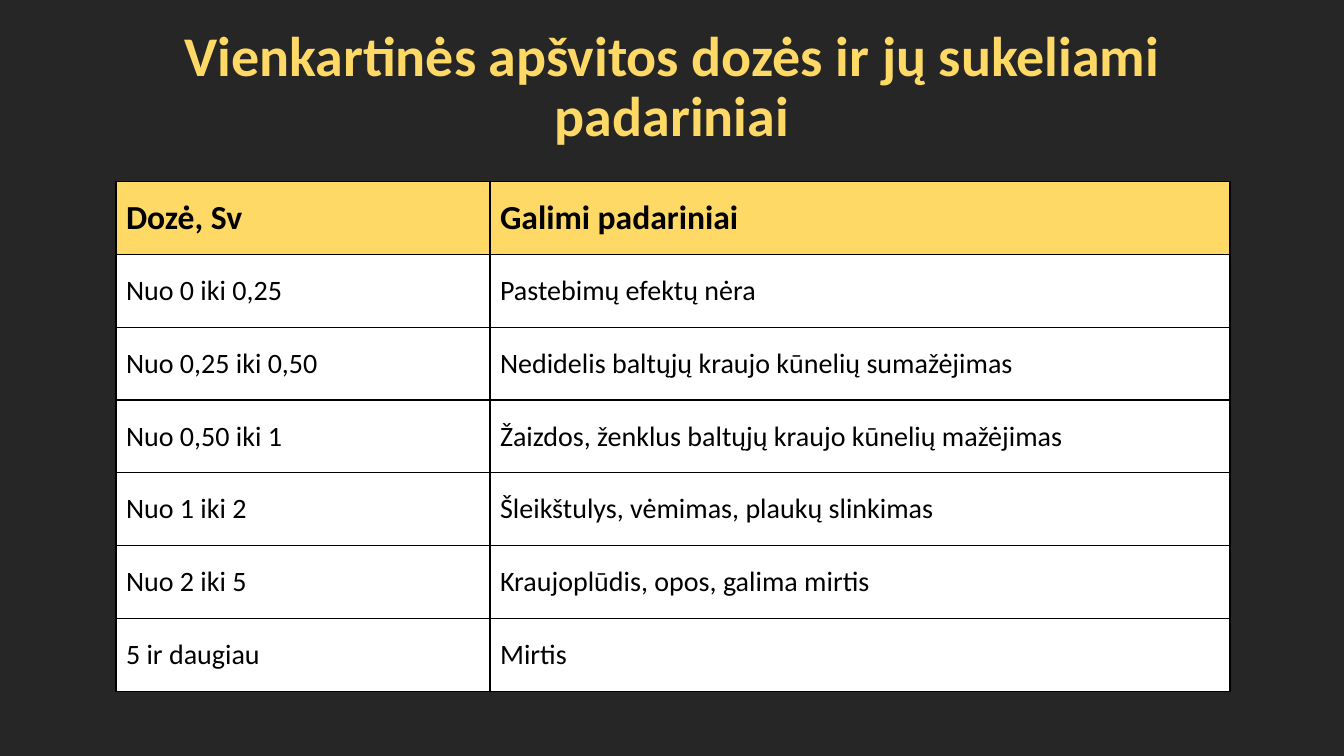
from lxml.etree import SubElement
from pptx import Presentation
from pptx.dml.color import RGBColor
from pptx.enum.text import MSO_ANCHOR as Anchor, PP_ALIGN as Align
from pptx.oxml.ns import qn
from pptx.util import Inches, Pt

TITLE = "Vienkartinės apšvitos dozės ir jų sukeliami padariniai"
DOSES = [
    ("Dozė, Sv", "Galimi padariniai"),
    ("Nuo 0 iki 0,25", "Pastebimų efektų nėra"),
    ("Nuo 0,25 iki 0,50", "Nedidelis baltųjų kraujo kūnelių sumažėjimas"),
    ("Nuo 0,50 iki 1", "Žaizdos, ženklus baltųjų kraujo kūnelių mažėjimas"),
    ("Nuo 1 iki 2", "Šleikštulys, vėmimas, plaukų slinkimas"),
    ("Nuo 2 iki 5", "Kraujoplūdis, opos, galima mirtis"),
    ("5 ir daugiau", "Mirtis"),
]
DARK, GOLD, WHITE, BLACK = "262626", "FFD966", "FFFFFF", "000000"
WIDTH, HEIGHT = 13.33, 7.5
COLUMNS = (3.71, 7.34)
TABLE_TOP, TABLE_HEIGHT = 1.8, 5.06


def paint(fill, color):
    fill.solid()
    fill.fore_color.rgb = RGBColor.from_string(color)


def style(paragraph, size, color, bold):
    font = paragraph.font
    font.name, font.size, font.bold = "Calibri", Pt(size), bold
    paint(font.fill, color)


def outline(cell):
    properties = cell._tc.get_or_add_tcPr()
    for position, side in enumerate(("lnL", "lnR", "lnT", "lnB")):
        border = properties.makeelement(qn(f"a:{side}"), {"w": str(Pt(1))})
        fill = SubElement(border, qn("a:solidFill"))
        SubElement(fill, qn("a:srgbClr"), val=BLACK)
        properties.insert(position, border)


def add_title(slide):
    title_width = 11.5
    box = slide.shapes.add_textbox(
        Inches((WIDTH - title_width) / 2), Inches(0.15), Inches(title_width), Inches(1.45))
    frame = box.text_frame
    frame.word_wrap = True
    frame.vertical_anchor = Anchor.MIDDLE
    heading = frame.paragraphs[0]
    heading.text = TITLE
    heading.alignment = Align.CENTER
    heading.line_spacing = 0.9
    style(heading, 40, GOLD, True)


def add_doses(slide):
    table_width = sum(COLUMNS)
    table = slide.shapes.add_table(
        len(DOSES), len(COLUMNS), Inches(1.15), Inches(TABLE_TOP),
        Inches(table_width), Inches(TABLE_HEIGHT)).table
    for column, width in zip(table.columns, COLUMNS):
        column.width = Inches(width)
    for row, entries in enumerate(DOSES):
        header = row == 0
        for column, entry in enumerate(entries):
            cell = table.cell(row, column)
            cell.text = entry
            cell.vertical_anchor = Anchor.MIDDLE
            paint(cell.fill, GOLD if header else WHITE)
            style(cell.text_frame.paragraphs[0], 24 if header else 20, BLACK, header)
            outline(cell)


def main():
    deck = Presentation()
    deck.slide_width, deck.slide_height = Inches(WIDTH), Inches(HEIGHT)
    slide = deck.slides.add_slide(deck.slide_layouts[6])
    paint(slide.background.fill, DARK)
    add_doses(slide)
    add_title(slide)
    deck.save("out.pptx")


if __name__ == "__main__":
    main()
